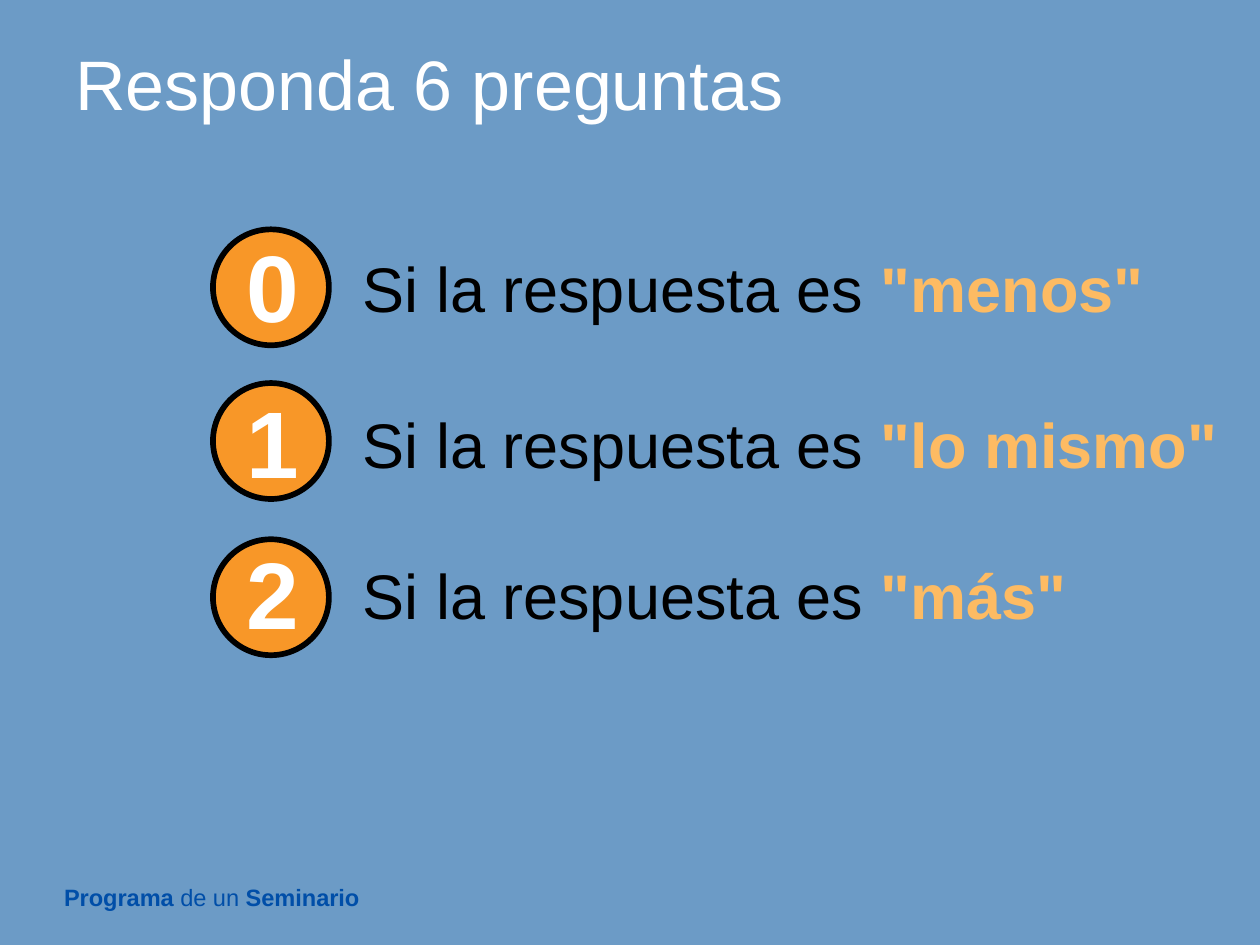
"""Build the answer-scoring slide: three numbered circles with their answers."""
from pptx import Presentation
from pptx.dml.color import RGBColor
from pptx.enum.shapes import MSO_SHAPE
from pptx.enum.text import MSO_ANCHOR
from pptx.util import Inches, Pt

COLORS = {
    "background": "6C9BC6",
    "footer": "004EA8",
    "white": "FFFFFF",
    "black": "000000",
    "circle": "F89728",
    "answer": "FDBB63",
}
TITLE = "Responda 6 preguntas"
FOOTER = [("Programa", "footer", True), (" de un ", "footer", False), ("Seminario", "footer", True)]
LEAD = "Si la respuesta es "
SCORES = [
    {"score": "0", "answer": '"menos"', "width": 6.46, "circle_top": 1.82, "score_top": 1.76},
    {"score": "1", "answer": '"lo mismo"', "width": 7.05, "circle_top": 3.04, "score_top": 3.0},
    {"score": "2", "answer": '"más"', "width": 5.84, "circle_top": 4.28, "score_top": 4.2},
]
CIRCLE_LEFT, CIRCLE_SIZE = 1.69, 0.92
SCORE_LEFT, SCORE_WIDTH, SCORE_HEIGHT = 1.86, 0.62, 1.01
ANSWER_LEFT, ANSWER_HEIGHT, ANSWER_OFFSET = 2.78, 0.71, 0.17


def rgb(name):
    return RGBColor.from_string(COLORS[name])


def add_text(slide, runs, box, size, wrap=False, anchor=MSO_ANCHOR.TOP, line_spacing=1.0):
    frame = slide.shapes.add_textbox(*map(Inches, box)).text_frame
    frame.word_wrap = wrap
    frame.vertical_anchor = anchor
    paragraph = frame.paragraphs[0]
    paragraph.line_spacing = line_spacing
    for text, color, bold in runs:
        run = paragraph.add_run()
        run.text = text
        run.font.name = "Arial"
        run.font.size = Pt(size)
        run.font.bold = bold
        run.font.color.rgb = rgb(color)


def add_circle(slide, top):
    circle = slide.shapes.add_shape(
        MSO_SHAPE.OVAL, *map(Inches, (CIRCLE_LEFT, top, CIRCLE_SIZE, CIRCLE_SIZE)))
    circle.shadow.inherit = False
    circle.fill.solid()
    circle.fill.fore_color.rgb = rgb("circle")
    circle.line.color.rgb = rgb("black")
    circle.line.width = Pt(3.25)


def main():
    deck = Presentation()
    deck.slide_width, deck.slide_height = Inches(10), Inches(7.5)
    slide = deck.slides.add_slide(deck.slide_layouts[6])
    slide.background.fill.solid()
    slide.background.fill.fore_color.rgb = rgb("background")

    add_text(slide, FOOTER, (0.41, 6.98, 3.29, 0.38), 13.5, wrap=True, line_spacing=0.9)
    add_text(slide, [(TITLE, "white", False)], (0.5, 0.31, 9.02, 0.78), 40,
             wrap=True, anchor=MSO_ANCHOR.MIDDLE, line_spacing=0.9)
    for row in SCORES:
        add_circle(slide, row["circle_top"])
        add_text(slide, [(row["score"], "white", True)],
                 (SCORE_LEFT, row["score_top"], SCORE_WIDTH, SCORE_HEIGHT), 54)
        add_text(slide, [(LEAD, "black", False), (row["answer"], "answer", True)],
                 (ANSWER_LEFT, row["score_top"] + ANSWER_OFFSET, row["width"], ANSWER_HEIGHT), 36)

    deck.save("out.pptx")


if __name__ == "__main__":
    main()
